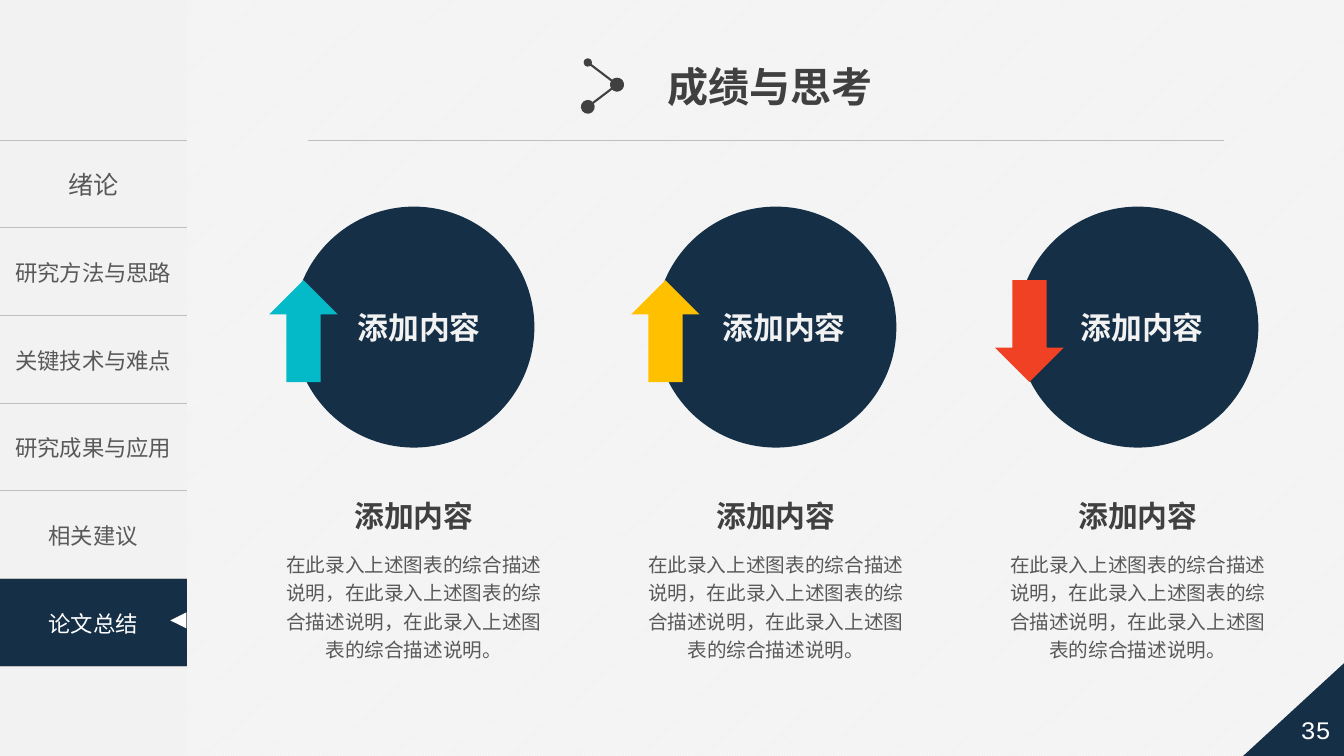
import pptx
import pptx.util
import pptx.oxml
import pptx.oxml.ns
import pptx.dml.color
import pptx.enum.dml
import pptx.enum.shapes
import pptx.enum.text
import lxml.etree

Inches = pptx.util.Inches
Shape = pptx.enum.shapes.MSO_SHAPE
Align = pptx.enum.text.PP_ALIGN
Anchor = pptx.enum.text.MSO_ANCHOR

# Content
TITLE = "成绩与思考"
PAGE = "35"
MENU = ["绪论", "研究方法与思路", "关键技术与难点", "研究成果与应用", "相关建议", "论文总结"]
ACTIVE = 5
LABEL = "添加内容"
BODY = "在此录入上述图表的综合描述说明，" * 2 + "在此录入上述图表的综合描述说明。"
# arrow shape, colour name, arrow left, label left
COLUMNS = [
    (Shape.UP_ARROW, "teal", 2.67, 3.45),
    (Shape.UP_ARROW, "gold", 6.26, 7.07),
    (Shape.DOWN_ARROW, "red", 9.87, 10.62),
]


class Theme:
    color = {
        "navy": "152F47", "pale": "F2F2F2", "white": "FFFFFF", "rule": "BFBFBF",
        "dark": "404040", "grey": "595959",
        "teal": "05BAC8", "gold": "FFC000", "red": "F14124",
    }
    cjk = "Noto Sans CJK SC"
    # colour name, then font attributes
    text = {
        "title": ("dark", {"size": 29.3, "bold": True, "name": "Arial"}),
        "first": ("grey", {"size": 18, "bold": False, "name": cjk}),
        "menu": ("grey", {"size": 16, "bold": False, "name": cjk}),
        "active": ("white", {"size": 16, "bold": False, "name": cjk}),
        "page": ("white", {"size": 18, "bold": False, "name": "Courier New"}),
        "label": ("pale", {"size": 22, "bold": True, "name": cjk}),
        "head": ("dark", {"size": 21.3, "bold": True, "name": cjk}),
        "body": ("grey", {"size": 14, "bold": False, "name": cjk}),
    }


# Layout, in inches
SIDE = 1.85
TOP = 1.39
ROW = 0.87
STEP = 3.59
DISC = 2.39


def tint(name):
    return pptx.dml.color.RGBColor.from_string(Theme.color[name])


def place(*box):
    return [Inches(v) for v in box]


def write(frame, text, style, align=Align.CENTER, space=None):
    """Put one styled paragraph in a text frame."""
    para = frame.paragraphs[0]
    para.alignment = align
    para.line_spacing = space
    run = para.add_run()
    run.text = text
    hue, form = Theme.text[style]
    for key, value in form.items():
        setattr(run.font, key, pptx.util.Pt(value) if key == "size" else value)
    run.font.color.rgb = tint(hue)
    east = pptx.oxml.parse_xml(
        f'<a:ea {pptx.oxml.ns.nsdecls("a")} typeface="{Theme.cjk}"/>')
    run.font._element.find(pptx.oxml.ns.qn("a:latin")).addnext(east)


def set_frame(frame, **form):
    for key, value in form.items():
        setattr(frame, key, value)


def add_text(slide, box, text, style, align=Align.CENTER, space=None, **form):
    frame = slide.shapes.add_textbox(*place(*box)).text_frame
    set_frame(frame, **{"word_wrap": True, **form})
    write(frame, text, style, align, space)


def add_solid(slide, kind, box, hue):
    shape = slide.shapes.add_shape(kind, *place(*box))
    shape.shadow.inherit = False
    shape.fill.solid()
    shape.fill.fore_color.rgb = tint(hue)
    shape.line.fill.background()
    return shape


def add_line(slide, ends, hue, width, dots=None):
    line = slide.shapes.add_connector(
        pptx.enum.shapes.MSO_CONNECTOR.STRAIGHT, *place(*ends))
    line.line.color.rgb = tint(hue)
    line.line.width = pptx.util.Pt(width)
    props = line._element.spPr
    if dots:
        pen = props.find(pptx.oxml.ns.qn("a:ln"))
        for tag, size in zip(("a:headEnd", "a:tailEnd"), dots):
            end = lxml.etree.SubElement(pen, pptx.oxml.ns.qn(tag))
            for key, value in {"type": "oval", "w": size, "len": size}.items():
                end.set(key, value)
    lxml.etree.SubElement(props, pptx.oxml.ns.qn("a:effectLst"))


def set_edges(cell):
    """Rule above and below a cell, none at the sides."""
    ruled = f'<a:solidFill><a:srgbClr val="{Theme.color["rule"]}"/></a:solidFill>'
    edges = {"lnL": "<a:noFill/>", "lnR": "<a:noFill/>", "lnT": ruled, "lnB": ruled}
    props = cell._tc.get_or_add_tcPr()
    for spot, (tag, paint) in enumerate(edges.items()):
        props.insert(spot, pptx.oxml.parse_xml(
            f'<a:{tag} {pptx.oxml.ns.nsdecls("a")} w="12700">{paint}</a:{tag}>'))


def add_menu(slide):
    add_solid(slide, Shape.RECTANGLE, (0, 0, SIDE, 7.5), "pale")
    count = len(MENU)
    table = slide.shapes.add_table(
        count, 1, *place(0, TOP, SIDE, ROW * count)).table
    table.first_row = table.horz_banding = False
    for row, text in enumerate(MENU):
        cell = table.cell(row, 0)
        cell.vertical_anchor = Anchor.MIDDLE
        cell.fill.solid()
        cell.fill.fore_color.rgb = tint("navy" if row == ACTIVE else "pale")
        style = {0: "first", ACTIVE: "active"}.get(row, "menu")
        write(cell.text_frame, text, style)
        set_edges(cell)
    # Pointer on the active row
    mark = add_solid(slide, Shape.ISOSCELES_TRIANGLE,
                     (SIDE - 0.16, TOP + ROW * (ACTIVE + 0.5) - 0.1, 0.16, 0.16), "white")
    mark.rotation = 270


def add_title(slide):
    title = slide.shapes.title
    title.left, title.top, title.width, title.height = place(6.52, 0.56, 2.26, 0.59)
    set_frame(title.text_frame, word_wrap=False, vertical_anchor=Anchor.MIDDLE,
              auto_size=pptx.enum.text.MSO_AUTO_SIZE.NONE)
    write(title.text_frame, TITLE, "title", Align.LEFT)
    add_line(slide, (3.05, TOP, 12.14, TOP), "rule", 0.5)
    # Joined dots beside the title
    add_line(slide, (5.83, 0.62, 6.12, 0.84), "dark", 1.5, ("med", "lg"))
    add_line(slide, (6.12, 0.84, 5.83, 1.06), "dark", 1.5, ("lg", "lg"))


def add_column(slide, index, kind, hue, arrow, label):
    shift = index * STEP
    add_solid(slide, Shape.OVAL, (2.91 + shift, 2.05, DISC, DISC), "navy")
    add_solid(slide, kind, (arrow, 2.78, 0.68, 1.01), hue)
    add_text(slide, (label, 3.01, 1.5, 0.47), LABEL, "label", Align.LEFT)
    add_text(slide, (3.41 + shift, 4.89, 1.39, 0.63), LABEL, "head", word_wrap=False)
    pad = {"margin_left": Inches(0.13), "margin_right": Inches(0.13),
           "margin_top": Inches(0.07), "margin_bottom": Inches(0.07)}
    add_text(slide, (2.65 + shift, 5.37, 2.91, 1.2), BODY, "body", space=1.2, **pad)


def add_page(slide):
    corner = add_solid(slide, Shape.RIGHT_TRIANGLE, (12.33, 6.58, 1, 0.92), "navy")
    corner._element.spPr.xfrm.set("flipH", "1")
    add_text(slide, (12.77, 6.97, 0.56, 0.53), PAGE, "page",
             vertical_anchor=Anchor.MIDDLE, margin_left=0, margin_right=0)


def main():
    deck = pptx.Presentation()
    deck.slide_width, deck.slide_height = place(13.33, 7.5)
    slide = deck.slides.add_slide(deck.slide_layouts[5])
    # Hatched background
    fill = slide.background.fill
    fill.patterned()
    fill.pattern = pptx.enum.dml.MSO_PATTERN.LIGHT_UPWARD_DIAGONAL
    fill.fore_color.rgb = tint("white")
    fill.back_color.rgb = tint("pale")
    add_menu(slide)
    add_title(slide)
    for index, column in enumerate(COLUMNS):
        add_column(slide, index, *column)
    add_page(slide)
    deck.save("out.pptx")


if __name__ == "__main__":
    main()
